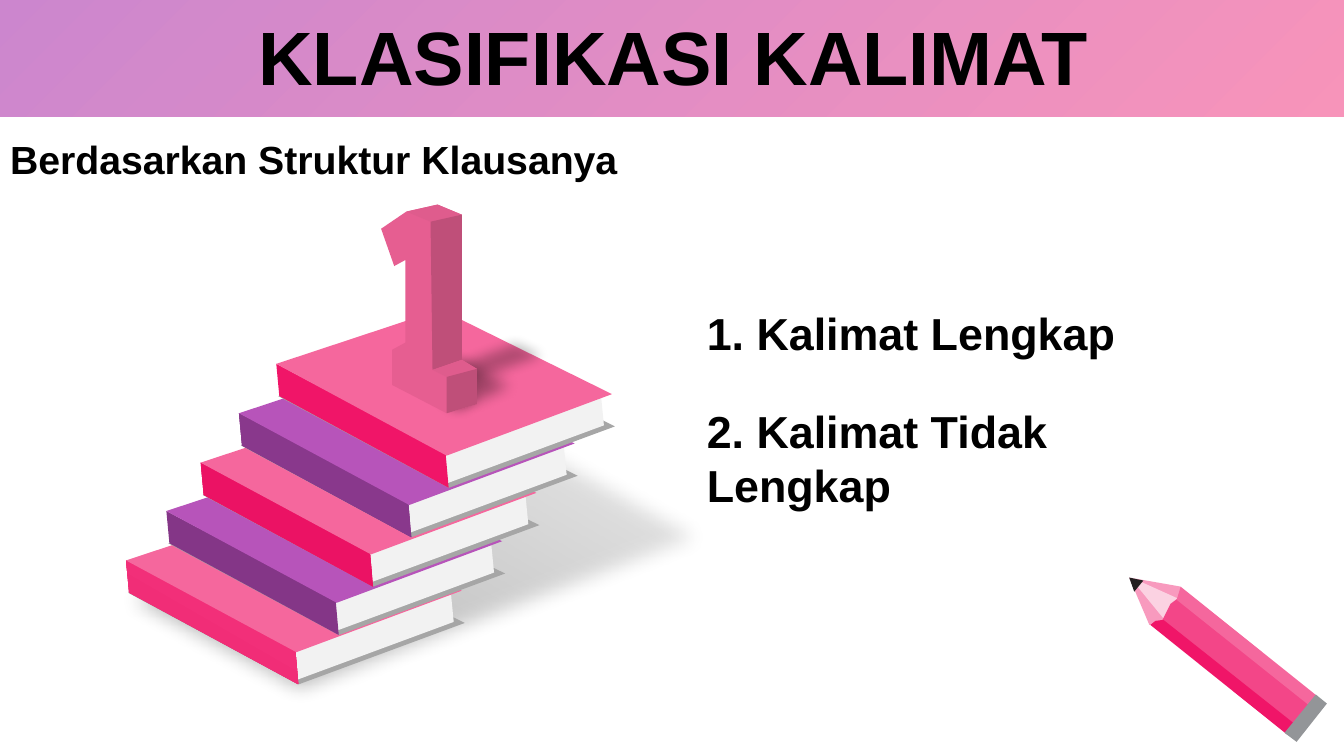
from dataclasses import dataclass

from lxml.etree import SubElement
from pptx import Presentation
from pptx.dml.color import RGBColor
from pptx.enum.shapes import MSO_SHAPE
from pptx.enum.text import MSO_ANCHOR, MSO_AUTO_SIZE, PP_ALIGN
from pptx.oxml.ns import qn
from pptx.util import Pt

PX = 9144  # EMU in one px, 100 px to the inch

HUES = {
    "black": "000000", "white": "FFFFFF", "paper": "F2F2F2", "board": "A6A6A6",
    "pink": "F5679D", "rose": "F34688", "red": "F01568", "wine": "E50F60",
    "coral": "F12673", "blush": "F2367D", "lilac": "B754BA", "plum": "843687",
    "grape": "8E3A90", "lead": "231F20", "steel": "939598",
    "face": "E65E91", "top": "DF5C8D", "side": "BF4F79",
}

Point = tuple[int, int]


@dataclass
class Paint:
    """One hue, or two for a gradient, with the opacity of each in percent."""
    hues: tuple[str, ...]
    alpha: tuple[int, ...] = (100, 100)
    angle: int = 60


@dataclass
class Patch:
    paint: Paint
    points: list[Point]
    soft: int = 0


@dataclass
class Book:
    corner: Point
    spine: Paint
    cover: str


@dataclass
class Label:
    text: str
    box: tuple[int, int, int, int]
    size: int


def plain(hue: str, alpha: int = 100) -> Paint:
    return Paint((hue,), (alpha,))


def rgb(hue: str) -> RGBColor:
    return RGBColor.from_string(HUES[hue])


def scale(box: tuple[int, ...]) -> list[int]:
    return [n * PX for n in box]


def dress(shape, paint: Paint, soft: int = 0) -> None:
    """Fill a shape, drop its line and shadow, and blur its edge."""
    shape.shadow.inherit = False
    shape.line.fill.background()
    fill = shape.fill
    if len(paint.hues) > 1:
        fill.gradient()
        fill.gradient_angle = paint.angle
        for stop, hue in zip(fill.gradient_stops, paint.hues):
            stop.color.rgb = rgb(hue)
    else:
        fill.solid()
        fill.fore_color.rgb = rgb(paint.hues[0])
    props = shape._element.spPr
    for color, alpha in zip(props.iter(qn("a:srgbClr")), paint.alpha):
        if alpha < 100:
            SubElement(color, qn("a:alpha"), val=str(alpha * 1000))
    if soft:
        SubElement(props.find(qn("a:effectLst")), qn("a:softEdge"), rad=str(soft * PX))


def draw(group, patch: Patch) -> None:
    first, *rest = patch.points
    pen = group.shapes.build_freeform(*first, scale=PX)
    pen.add_line_segments(rest, close=True)
    dress(pen.convert_to_shape(), patch.paint, patch.soft)


def stack(group, book: Book) -> None:
    """Draw one book from its left corner: back board, pages, spine, cover."""
    parts = [
        (plain("board"), [(2, 32), (166, -22), (336, 62), (171, 123)]),
        (plain("paper"), [(322, 30), (325, 61), (168, 119), (167, 88)]),
        (book.spine, [(0, 0), (3, 32), (171, 123), (168, 89)]),
        (plain(book.cover), [(0, 0), (163, -54), (333, 30), (169, 91)]),
    ]
    left, top = book.corner
    for paint, steps in parts:
        draw(group, Patch(paint, [(left + x, top + y) for x, y in steps]))


def style(par, size: int) -> None:
    look = {"name": "Arial", "size": Pt(size), "bold": True}
    for key, value in look.items():
        setattr(par.font, key, value)
    par.font.color.rgb = rgb("black")


def write(slide, label: Label) -> None:
    frame = slide.shapes.add_textbox(*scale(label.box)).text_frame
    look = {
        "text": label.text, "word_wrap": True,
        "auto_size": MSO_AUTO_SIZE.SHAPE_TO_FIT_TEXT,
        "margin_left": 12 * PX, "margin_right": 12 * PX,
        "margin_top": 5 * PX, "margin_bottom": 5 * PX,
    }
    for key, value in look.items():
        setattr(frame, key, value)
    style(frame.paragraphs[0], label.size)


def head(slide) -> None:
    """Draw the band and lay the title over it."""
    band = slide.shapes.add_shape(MSO_SHAPE.RECTANGLE, *scale((0, 0, 1333, 116)))
    dress(band, Paint(("pink", "lilac"), (70, 70), 135))
    title = slide.shapes.title
    slide.shapes._spTree.append(title._element)
    for key, value in zip(("left", "top", "width", "height"), scale((35, 21, 1266, 79))):
        setattr(title, key, value)
    frame = title.text_frame
    frame.text = "KLASIFIKASI KALIMAT"
    frame.vertical_anchor = MSO_ANCHOR.MIDDLE
    frame.auto_size = MSO_AUTO_SIZE.NONE
    par = frame.paragraphs[0]
    look = {"alignment": PP_ALIGN.CENTER, "line_spacing": 0.9, "space_before": Pt(10)}
    for key, value in look.items():
        setattr(par, key, value)
    style(par, 54)


LABELS = [
    Label("1. Kalimat Lengkap", (689, 298, 506, 64), 32),
    Label("2. Kalimat Tidak Lengkap", (689, 396, 506, 118), 32),
    Label("Berdasarkan Struktur Klausanya", (-2, 129, 663, 57), 28),
]

GROUND = Patch(Paint(("black", "black"), (7, 33), 240),
               [(88, 599), (294, 709), (747, 536), (539, 420), (93, 584)], 20)

BOOKS = [
    Book((125, 556), Paint(("coral", "blush")), "pink"),
    Book((165, 507), plain("plum"), "lilac"),
    Book((199, 459), Paint(("red", "wine")), "pink"),
    Book((237, 410), Paint(("plum", "grape")), "lilac"),
    Book((274, 361), plain("red"), "pink"),
]

DIGIT = [
    Patch(plain("black", 70), [(380, 374), (422, 345), (510, 394), (452, 429)], 15),
    Patch(plain("black", 35), [(360, 360), (437, 329), (551, 382), (469, 420)], 15),
    Patch(plain("black", 27), [(384, 373), (404, 364), (513, 324), (577, 355), (444, 402)], 12),
    Patch(plain("face"), [
        (378, 227), (403, 210), (434, 203), (458, 213), (458, 357), (473, 366), (473, 401),
        (443, 410), (389, 382), (389, 347), (402, 340), (402, 258), (391, 264)]),
    Patch(plain("top"), [(403, 210), (434, 203), (458, 213), (427, 220)]),
    Patch(plain("side"), [(427, 220), (458, 213), (458, 357), (429, 367)]),
    Patch(plain("top"), [(429, 367), (458, 357), (473, 366), (443, 374)]),
    Patch(plain("side"), [(443, 374), (473, 366), (473, 401), (443, 410)]),
]

PENCIL = [
    Patch(plain("pink", 66), [(1140, 620), (1120, 573), (1171, 582), (1174, 601),
                              (1169, 614), (1158, 620)]),
    Patch(plain("white", 56), [(1156, 616), (1120, 572), (1171, 595), (1167, 606)]),
    Patch(plain("rose"), [(1283, 722), (1152, 617), (1161, 599), (1169, 593), (1301, 699)]),
    Patch(plain("red"), [(1277, 729), (1141, 620), (1146, 616), (1154, 615), (1285, 719)]),
    Patch(plain("pink"), [(1300, 701), (1167, 595), (1169, 589), (1171, 582), (1307, 691)]),
    Patch(plain("lead"), [(1125, 587), (1120, 573), (1134, 576)]),
    Patch(plain("steel"), [(1316, 698), (1286, 736), (1274, 727), (1305, 689)]),
]


def main() -> None:
    deck = Presentation()
    deck.slide_width, deck.slide_height = scale((1333, 750))
    slide = deck.slides.add_slide(deck.slide_layouts[5])
    head(slide)
    for label in LABELS:
        write(slide, label)
    pile = slide.shapes.add_group_shape()
    draw(pile, GROUND)
    for book in BOOKS:
        stack(pile, book)
    for patch in DIGIT:
        draw(pile, patch)
    pencil = slide.shapes.add_group_shape()
    for patch in PENCIL:
        draw(pencil, patch)
    deck.save("out.pptx")


if __name__ == "__main__":
    main()
